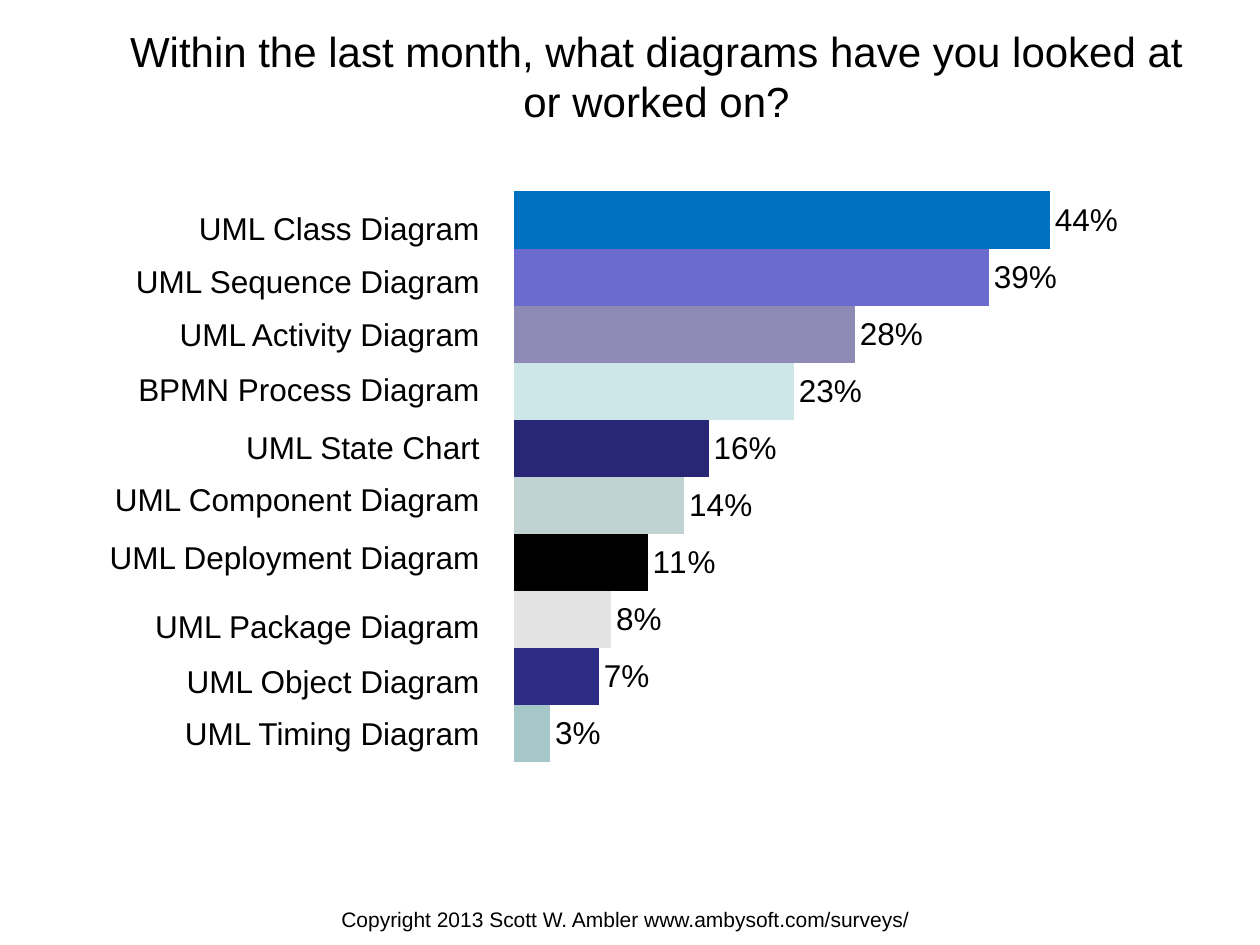
from lxml import etree
from pptx import Presentation
from pptx import util as u
from pptx.chart.data import CategoryChartData
from pptx.dml.color import RGBColor
from pptx.enum import chart as charts, text
from pptx.oxml import parse_xml
from pptx.oxml.ns import nsdecls, qn

PX = 914400 // 126
BLACK = RGBColor(0, 0, 0)
BLUE = RGBColor(0x00, 0x70, 0xC0)
PERIWINKLE = RGBColor(0x6B, 0x6B, 0xCF)
LAVENDER = RGBColor(0x8D, 0x8B, 0xB5)
ICE = RGBColor(0xCD, 0xE6, 0xE7)
NAVY = RGBColor(0x27, 0x27, 0x75)
MIST = RGBColor(0xC0, 0xD2, 0xD2)
SILVER = RGBColor(0xE3, 0xE3, 0xE3)
INDIGO = RGBColor(0x2D, 0x2D, 0x85)
TEAL = RGBColor(0xA6, 0xC7, 0xC9)

LABEL_RIGHT = 492
# diagram, share, bar colour, label top, label width
DIAGRAMS = [
    ("UML Class Diagram", 0.44, BLUE, 203, 309),
    ("UML Sequence Diagram", 0.39, PERIWINKLE, 256, 373),
    ("UML Activity Diagram", 0.28, LAVENDER, 309, 328),
    ("BPMN Process Diagram", 0.23, ICE, 364, 370),
    ("UML State Chart", 0.16, NAVY, 422, 261),
    ("UML Component Diagram", 0.14, MIST, 474, 393),
    ("UML Deployment Diagram", 0.11, BLACK, 532, 399),
    ("UML Package Diagram", 0.08, SILVER, 601, 353),
    ("UML Object Diagram", 0.07, INDIGO, 656, 321),
    ("UML Timing Diagram", 0.03, TEAL, 708, 323),
]


class SurveySlide:
    font = "Arial"
    color = BLACK

    def __init__(self, slide):
        self.slide = slide

    def style(self, font, size):
        font.name, font.size = self.font, u.Pt(size)
        font.color.rgb = self.color

    def text(self, wording, box, size, align, anchor=text.MSO_ANCHOR.TOP, wrap=True):
        frame = self.slide.shapes.add_textbox(*(n * PX for n in box)).text_frame
        frame.text = wording
        frame.word_wrap = wrap
        frame.vertical_anchor = anchor
        line = frame.paragraphs[0]
        line.alignment = align
        self.style(line.runs[0].font, size)

    def bars(self, rows, box, size):
        """Draw one series per row, the last row at the bottom."""
        data = CategoryChartData(number_format="0%")
        data.categories = ["1"]
        for name, share, *_ in reversed(rows):
            data.add_series(name, [share])
        chart = self.slide.shapes.add_chart(
            charts.XL_CHART_TYPE.BAR_CLUSTERED, *(n * PX for n in box), data).chart
        chart.has_legend = chart.has_title = False
        self.style(chart.font, size)
        chart.category_axis.visible = False
        values = chart.value_axis
        values.visible = values.has_major_gridlines = False
        values.minimum_scale, values.maximum_scale = 0, 0.5

        plot = chart.plots[0]
        plot.gap_width, plot.overlap = 150, 0
        plot.vary_by_categories = False
        for series, (_, _, color, *_) in zip(plot.series, reversed(rows)):
            series.format.fill.solid()
            series.format.fill.fore_color.rgb = color
            series.format.line.fill.background()
            labels = series.data_labels
            labels.show_value = True
            labels.number_format, labels.number_format_is_linked = "0%", False
            labels.position = charts.XL_LABEL_POSITION.OUTSIDE_END
            self.style(labels.font, size)
        self.fix_plot_area(chart, x=0.02, y=0.02, w=0.96, h=0.96)

    def fix_plot_area(self, chart, **fractions):
        area = chart.element.find(".//" + qn("c:plotArea"))
        for old in area.findall(qn("c:layout")):
            area.remove(old)
        layout = parse_xml(f"<c:layout {nsdecls('c')}><c:manualLayout/></c:layout>")
        settings = {"layoutTarget": "inner", "xMode": "edge", "yMode": "edge", **fractions}
        for tag, value in settings.items():
            etree.SubElement(layout[0], qn("c:" + tag)).set("val", str(value))
        area.insert(0, layout)


def main():
    deck = Presentation()
    deck.slide_width, deck.slide_height = u.Inches(10), u.Inches(7.5)
    survey = SurveySlide(deck.slides.add_slide(deck.slide_layouts[6]))
    center, right = text.PP_ALIGN.CENTER, text.PP_ALIGN.RIGHT

    survey.text("Within the last month, what diagrams have you looked at or worked on?",
                (115, 37, 1083, 77), 24, center, text.MSO_ANCHOR.MIDDLE)
    survey.bars(DIAGRAMS, (501, 135, 635, 684), 18)
    survey.text("Copyright 2013 Scott W. Ambler www.ambysoft.com/surveys/",
                (174, 900, 903, 28), 12, center)
    for name, _, _, top, width in DIAGRAMS:
        survey.text(name, (LABEL_RIGHT - width, top, width, 50), 18, right, wrap=False)

    deck.save("out.pptx")


if __name__ == "__main__":
    main()
